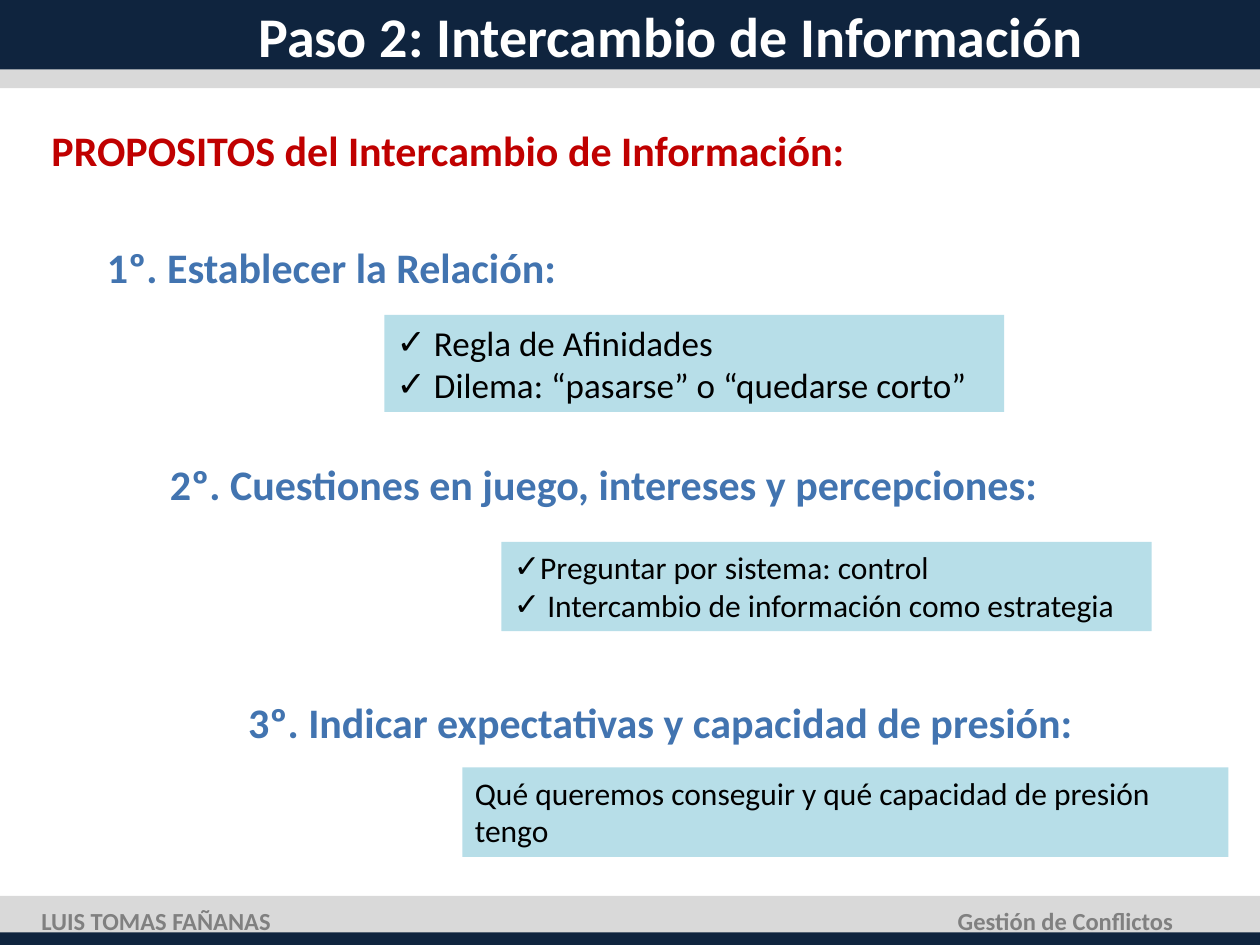
from lxml import etree
from pptx import Presentation
from pptx import util as u
from pptx.dml.color import RGBColor
from pptx.enum import shapes, text
from pptx.oxml.ns import qn

NAVY = RGBColor(0x0F, 0x24, 0x3E)
LIGHT_GRAY = RGBColor(0xD9, 0xD9, 0xD9)
FOOTER_GRAY = RGBColor(0x80, 0x80, 0x80)
WHITE = RGBColor(0xFF, 0xFF, 0xFF)
BLACK = RGBColor(0, 0, 0)
RED = RGBColor(0xC0, 0, 0)
BLUE = RGBColor(0x42, 0x74, 0xB0)
PALE_BLUE = RGBColor(0xB7, 0xDE, 0xE8)
FONT = "Calibri"


def add_check_mark(paragraph):
    properties = paragraph._p.get_or_add_pPr()
    properties.set("marL", "0")
    properties.set("indent", "0")
    etree.SubElement(properties, qn("a:buFont")).set("typeface", FONT)
    etree.SubElement(properties, qn("a:buChar")).set("char", "✓")


def write_text(shape, lines, size, color, bold=False, checked=False, wrap=True,
               align=text.PP_ALIGN.LEFT, anchor=text.MSO_ANCHOR.TOP,
               auto_size=text.MSO_AUTO_SIZE.SHAPE_TO_FIT_TEXT):
    frame = shape.text_frame
    frame.text = "\n".join(lines)
    frame.word_wrap = wrap
    frame.auto_size = auto_size
    frame.vertical_anchor = anchor
    for paragraph in frame.paragraphs:
        paragraph.alignment = align
        if checked:
            add_check_mark(paragraph)
        for run in paragraph.runs:
            run.font.name = FONT
            run.font.size = u.Pt(size)
            run.font.bold = bold
            run.font.color.rgb = color


class SlideBuilder:
    def __init__(self, slide):
        self.slide = slide

    def rectangle(self, left, top, width, height, color):
        shape = self.slide.shapes.add_shape(
            shapes.MSO_SHAPE.RECTANGLE, u.Inches(left), u.Inches(top),
            u.Inches(width), u.Inches(height))
        shape.shadow.inherit = False
        shape.fill.solid()
        shape.fill.fore_color.rgb = color
        shape.line.fill.background()
        return shape

    def title(self, words, left, top, width, height):
        title = self.slide.shapes.title
        title.left, title.top = u.Inches(left), u.Inches(top)
        title.width, title.height = u.Inches(width), u.Inches(height)
        write_text(title, [words], 32, WHITE, bold=True,
                   anchor=text.MSO_ANCHOR.MIDDLE,
                   auto_size=text.MSO_AUTO_SIZE.NONE)

    def label(self, words, left, top, width, height, size, color, **style):
        box = self.slide.shapes.add_textbox(
            u.Inches(left), u.Inches(top), u.Inches(width), u.Inches(height))
        write_text(box, [words], size, color, bold=True, wrap=False, **style)

    def panel(self, lines, left, top, width, height, size, checked):
        shape = self.rectangle(left, top, width, height, PALE_BLUE)
        write_text(shape, lines, size, BLACK, checked=checked)


def main():
    presentation = Presentation()
    presentation.slide_width = u.Inches(10)
    presentation.slide_height = u.Inches(7.5)
    slide = presentation.slides.add_slide(presentation.slide_layouts[5])
    builder = SlideBuilder(slide)

    for top, height, color in [(0, 0.7, LIGHT_GRAY), (0, 0.55, NAVY),
                               (7.11, 0.34, LIGHT_GRAY), (7.4, 0.1, NAVY)]:
        builder.rectangle(0, top, 10, height, color)

    # Bring the title in front of the bands
    slide.shapes._spTree.append(slide.shapes.title._element)
    builder.title("Paso 2: Intercambio de Información", 1.95, 0, 7.56, 0.56)

    headings = [
        ("1º. Establecer la Relación:", 0.75, 1.87, 3.8, BLUE),
        ("2º. Cuestiones en juego, intereses y percepciones:",
         1.25, 3.59, 7.16, BLUE),
        ("3º. Indicar expectativas y capacidad de presión:",
         1.87, 5.48, 6.81, BLUE),
        ("PROPOSITOS del Intercambio de Información:", 0.31, 0.94, 6.55, RED),
    ]
    for words, left, top, width, color in headings:
        builder.label(words, left, top, width, 0.5, 24, color)

    builder.panel([" Regla de Afinidades",
                   " Dilema: “pasarse” o “quedarse corto”"],
                  3.05, 2.5, 4.92, 0.77, size=20, checked=True)
    builder.panel(["Preguntar por sistema: control",
                   " Intercambio de información como estrategia"],
                  3.98, 4.3, 5.16, 0.71, size=18, checked=True)
    builder.panel(["Qué queremos conseguir y qué capacidad de presión tengo"],
                  3.67, 6.09, 6.08, 0.71, size=18, checked=False)

    for words, left, width, align in [
            ("LUIS TOMAS FAÑANAS", 0.23, 2.04, text.PP_ALIGN.LEFT),
            ("Gestión de Conflictos", 7.48, 1.93, text.PP_ALIGN.RIGHT)]:
        builder.label(words, left, 7.14, width, 0.34, 14, FOOTER_GRAY,
                      align=align, anchor=text.MSO_ANCHOR.MIDDLE)

    presentation.save("out.pptx")


if __name__ == "__main__":
    main()
